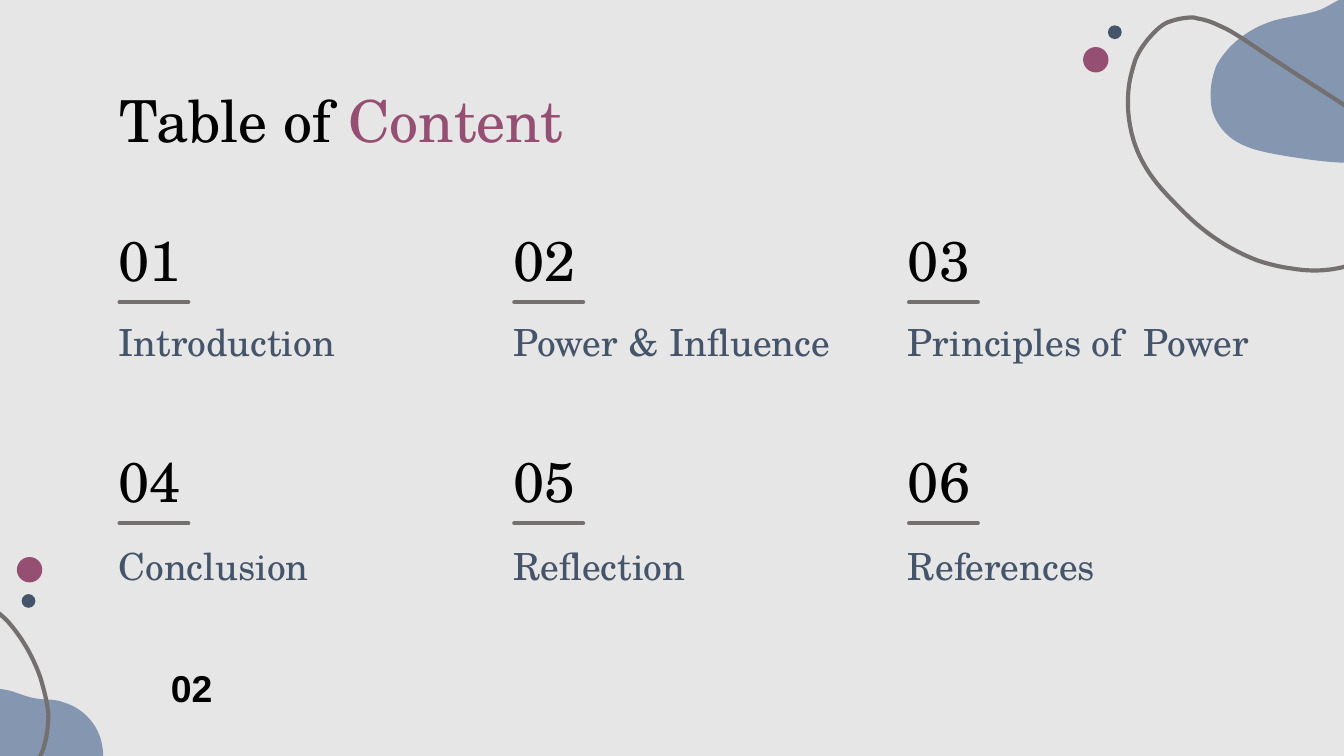
import pptx
import pptx.util
import pptx.dml.color
import pptx.enum.shapes
import pptx.enum.text
import pptx.oxml.ns
import lxml.etree

Cm, Pt, qn = pptx.util.Cm, pptx.util.Pt, pptx.oxml.ns.qn
SERIF = "TeX Gyre Schola"
BLACK, PLUM, NAVY, GREY, BLUE = "000000", "954F72", "44546A", "757070", "8496B0"

ITEMS = [("Introduction", 6.5, 1.12), ("Power & Influence", 6.5, 2.08),
         ("Principles of  Power", 6.96, 2.08), ("Conclusion", 6.5, 2.13),
         ("Reflection", 6.5, 1.12), ("References", 6.5, 1.12)]
COL_X, COL_STEP = 1.99, 7.46
NUMBER_Y, RULE_Y, ROW_STEP = 4.01, 5.71, 4.18
LABEL_Y, LABEL_STEP = 5.78, 4.23

DOTS = [(20.47, 0.89, 0.48, PLUM), (20.94, 0.48, 0.26, NAVY),
        (0.32, 10.53, 0.48, PLUM), (0.41, 11.23, 0.26, NAVY)]

UNIT = 0.0254
BLOBS = [
    [(1084, 49), (1086, 67, 1080, 86, 1067, 99), (1053, 113, 1033, 119, 1014, 121),
     (994, 122, 975, 119, 956, 116), (939, 113, 921, 110, 910, 97),
     (905, 91, 901, 83, 901, 75), (900, 66, 902, 57, 905, 49),
     (913, 34, 927, 23, 943, 17), (956, 12, 970, 12, 983, 7),
     (992, 3, 999, -3, 1010, -5), (1031, -10, 1056, -2, 1071, 15),
     (1079, 24, 1083, 36, 1084, 49)],
    [(73, 579), (68, 590, 58, 599, 46, 602), (33, 606, 19, 603, 8, 597),
     (-4, 591, -14, 583, -25, 574), (-33, 567, -42, 559, -45, 548),
     (-46, 543, -45, 537, -42, 532), (-40, 527, -36, 522, -31, 519),
     (-22, 513, -10, 511, 2, 513), (11, 514, 19, 519, 28, 520),
     (35, 521, 41, 520, 48, 523), (62, 527, 74, 540, 76, 555),
     (78, 563, 76, 572, 73, 579)],
]
LOOPS = [
    [(1048, 147), (1049, 141, 1049, 135, 1047, 129), (1046, 124, 1043, 118, 1040, 113),
     (1036, 106, 1030, 100, 1023, 94), (1016, 88, 1008, 83, 1000, 78),
     (975, 62, 950, 46, 925, 29), (920, 26, 914, 22, 909, 20),
     (903, 17, 898, 15, 892, 14), (891, 14, 889, 13, 888, 13),
     (880, 13, 873, 15, 868, 17), (864, 19, 861, 22, 859, 24),
     (853, 30, 848, 37, 845, 44), (843, 50, 841, 57, 840, 64),
     (839, 72, 839, 81, 840, 88), (842, 104, 847, 116, 854, 127),
     (861, 138, 871, 148, 881, 158), (897, 174, 915, 186, 936, 194),
     (945, 197, 954, 199, 962, 200), (980, 203, 998, 201, 1013, 194),
     (1022, 189, 1030, 183, 1036, 175), (1043, 167, 1047, 157, 1048, 147)],
    [(-72, 457), (-75, 461, -77, 465, -78, 469), (-79, 473, -79, 476, -79, 480),
     (-79, 486, -77, 491, -75, 497), (-72, 502, -70, 508, -67, 513),
     (-57, 531, -48, 548, -38, 566), (-36, 570, -34, 573, -32, 577),
     (-29, 580, -27, 584, -23, 586), (-20, 588, -14, 591, -9, 591),
     (-5, 592, -2, 591, 1, 590), (5, 589, 10, 587, 14, 583),
     (18, 580, 21, 576, 24, 572), (27, 568, 30, 563, 32, 558),
     (35, 549, 36, 540, 36, 531), (35, 522, 33, 514, 30, 504),
     (25, 490, 18, 477, 8, 465), (5, 461, 0, 457, -5, 453),
     (-15, 446, -26, 441, -37, 441), (-44, 441, -51, 442, -57, 445),
     (-63, 448, -68, 452, -72, 457)],
]


def color(value):
    return pptx.dml.color.RGBColor.from_string(value)


def set_fill(sp, value):
    sp.shadow.inherit = False
    sp.fill.solid()
    sp.fill.fore_color.rgb = color(value)
    sp.line.fill.background()


def add_curve(s, curve):
    builder = s.shapes.build_freeform(*curve[0], scale=Cm(UNIT))
    points = [c[i:i + 2] for c in curve[1:] for i in (0, 2, 4)]
    builder.add_line_segments(points, close=True)
    sp = builder.convert_to_shape()
    sp.shadow.inherit = False
    lines = list(sp._element.iter(qn("a:lnTo")))
    for i in range(0, len(points), 3):
        first, second, third = lines[i:i + 3]
        first.tag = qn("a:cubicBezTo")
        first.append(second[0])
        first.append(third[0])
        for line in (second, third):
            line.getparent().remove(line)
    return sp


def add_text(s, runs, x, y, w, h, size, font=SERIF, bold=False, inset=0.25, sp=None):
    sp = sp or s.shapes.add_textbox(0, 0, 0, 0)
    sp.left, sp.top, sp.width, sp.height = Cm(x), Cm(y), Cm(w), Cm(h)
    tf = sp.text_frame
    tf.word_wrap = True
    tf.auto_size = pptx.enum.text.MSO_AUTO_SIZE.NONE
    tf.vertical_anchor = pptx.enum.text.MSO_ANCHOR.TOP
    tf.margin_left = tf.margin_right = Cm(0.25)
    tf.margin_top = tf.margin_bottom = Cm(inset)
    p = tf.paragraphs[0]
    p.alignment = pptx.enum.text.PP_ALIGN.LEFT
    for text, value in runs:
        r = p.add_run()
        r.text = text
        r.font.size, r.font.name, r.font.bold = Pt(size), font, bold
        r.font.color.rgb = color(value)


def add_rule(s, x, y, length):
    sp = s.shapes.add_connector(pptx.enum.shapes.MSO_CONNECTOR.STRAIGHT,
                                Cm(x), Cm(y), Cm(x + length), Cm(y))
    sp.line.color.rgb = color(GREY)
    sp.line.width = Pt(2.25)
    sp.line._get_or_add_ln().set("cap", "rnd")
    lxml.etree.SubElement(sp._element.spPr, qn("a:effectLst"))


def main():
    prs = pptx.Presentation()
    prs.slide_width, prs.slide_height = Cm(25.4), Cm(14.29)
    s = prs.slides.add_slide(prs.slide_layouts[5])
    s.background.fill.solid()
    s.background.fill.fore_color.rgb = color("E7E6E6")

    for blob, loop in zip(BLOBS, LOOPS):
        set_fill(add_curve(s, blob), BLUE)
        sp = add_curve(s, loop)
        sp.fill.background()
        sp.line.color.rgb = color(GREY)
        sp.line.width = Pt(2.25)

    for x, y, size, value in DOTS:
        sp = s.shapes.add_shape(pptx.enum.shapes.MSO_SHAPE.OVAL,
                                Cm(x), Cm(y), Cm(size), Cm(size))
        set_fill(sp, value)

    add_text(s, [("Table of ", BLACK), ("Content", PLUM)], 2, 1.35, 10.87, 1.6, 31,
             sp=s.shapes.title)

    for i, (label, width, height) in enumerate(ITEMS):
        row, col = divmod(i, 3)
        x, dy = COL_X + col * COL_STEP, row * ROW_STEP
        add_text(s, [(f"{i + 1:02}", BLACK)], x, NUMBER_Y + dy, 2.77, 1.4, 30)
        add_rule(s, x + 0.27, RULE_Y + dy, 1.3)
        add_text(s, [(label, NAVY)], x, LABEL_Y + row * LABEL_STEP, width, height, 20)

    add_text(s, [("02", BLACK)], 2.98, 12.45, 1.8, 1.12, 20,
             font="Arial", bold=True, inset=0.13)
    prs.save("out.pptx")


if __name__ == "__main__":
    main()
